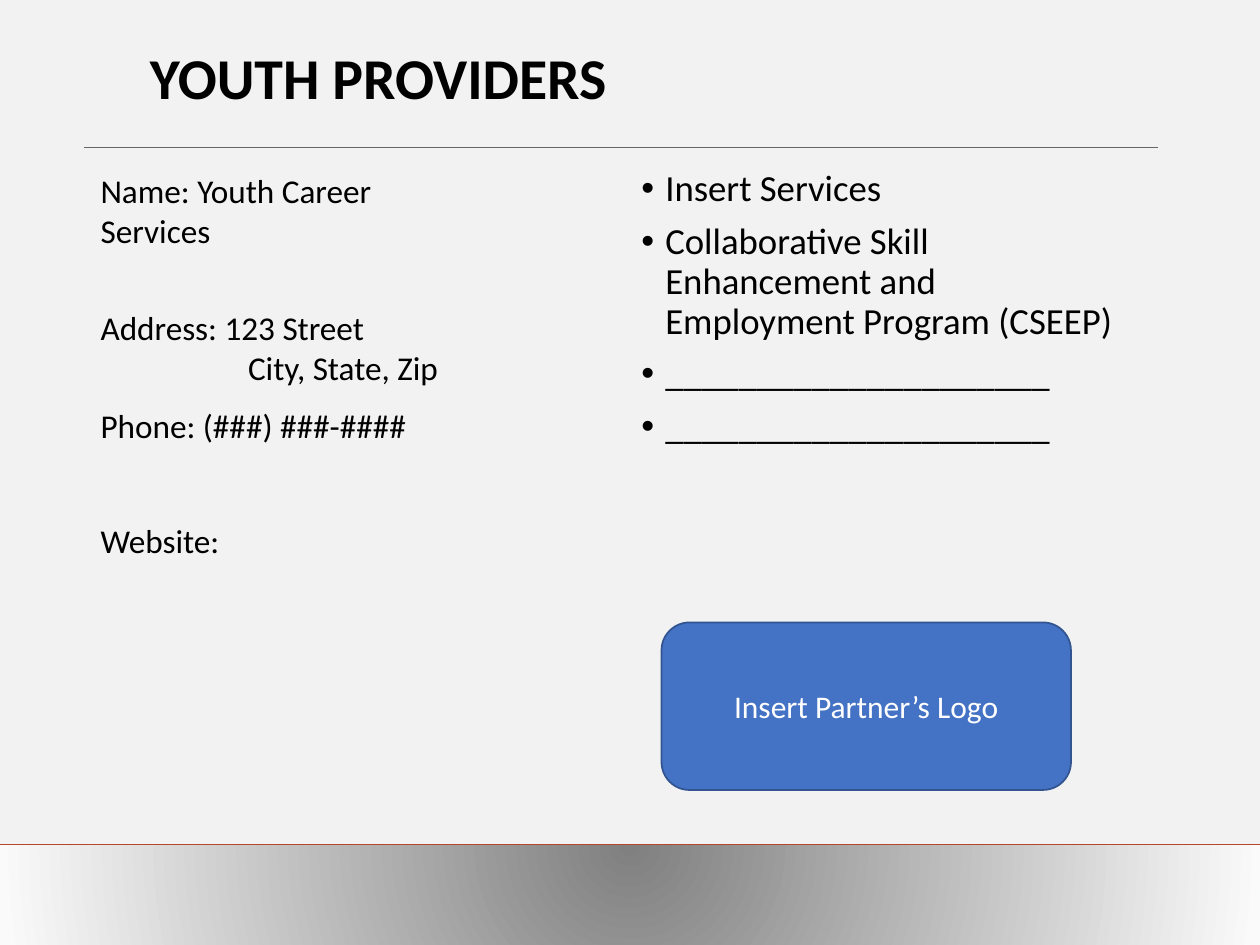
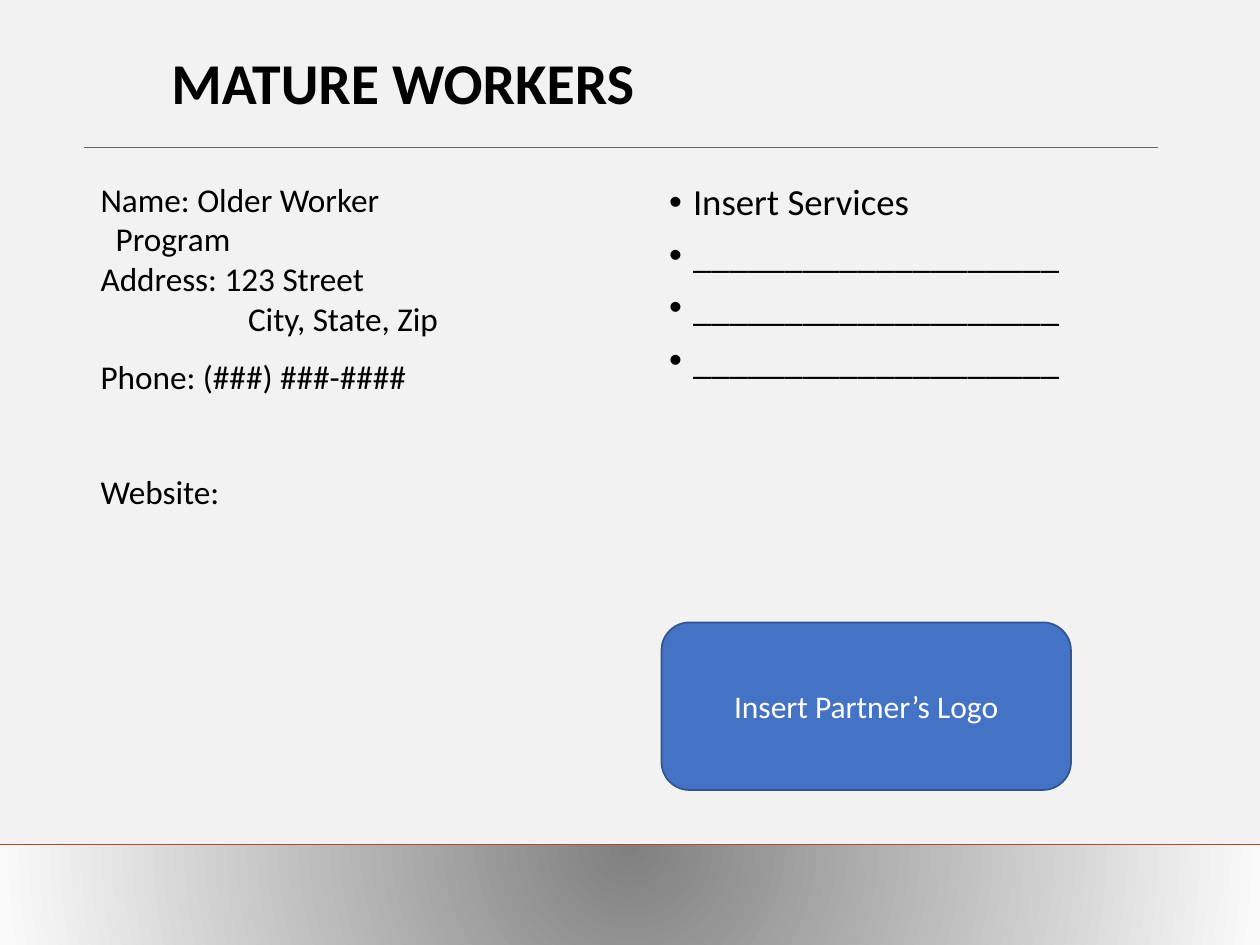
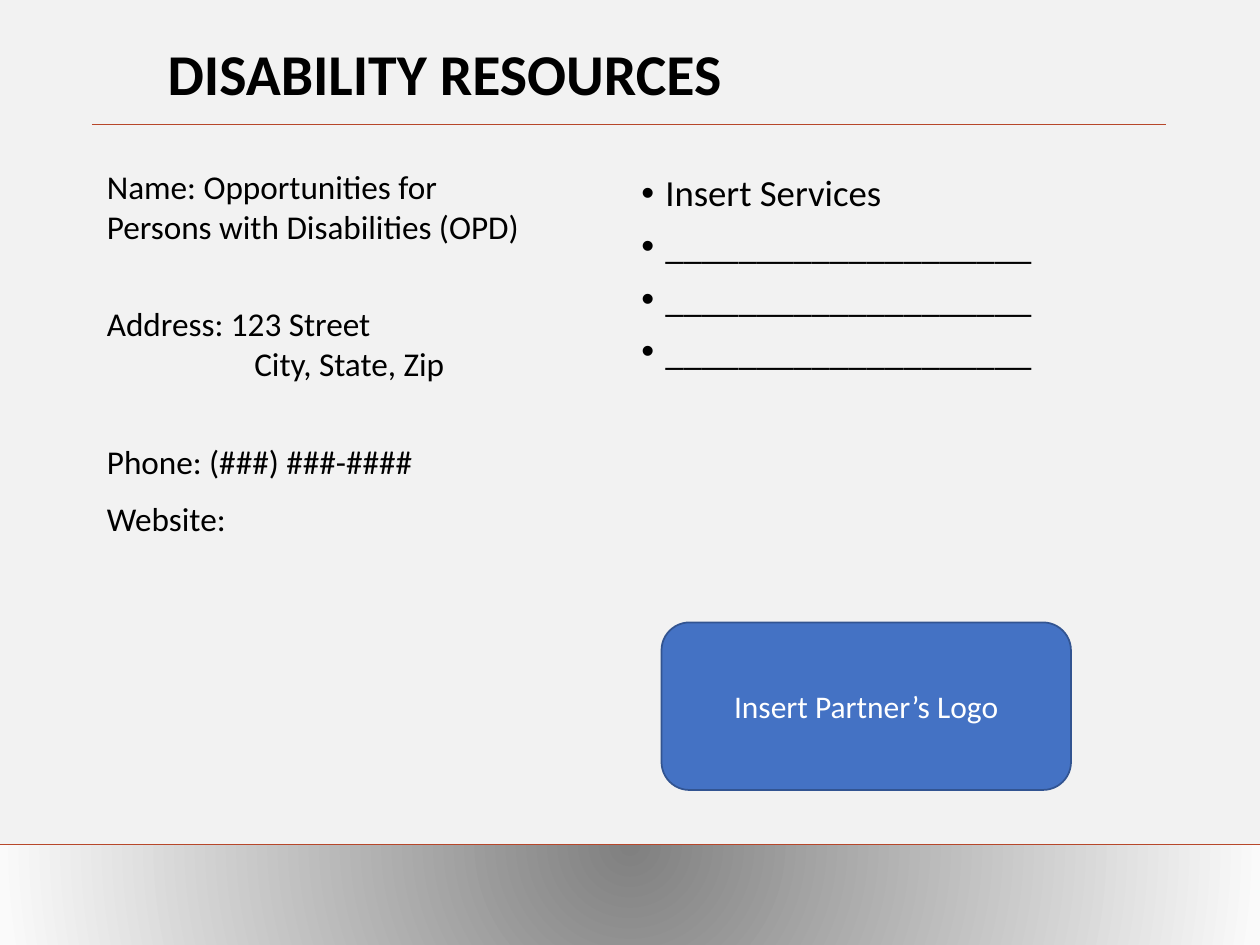
from dataclasses import dataclass

from lxml import etree
from pptx import Presentation
from pptx import util as u
from pptx.dml.color import RGBColor
from pptx.enum import shapes, text
from pptx.oxml.ns import qn

W, H = u.Inches(10), u.Inches(7.5)
COL, ROW = W / 10, H / 7.5
FONT = "Calibri"
BLACK = RGBColor(0x00, 0x00, 0x00)
WHITE = RGBColor(0xFF, 0xFF, 0xFF)
PAPER = RGBColor(0xF2, 0xF2, 0xF2)
RUST = RGBColor(0xB7, 0x47, 0x2A)
GREY = RGBColor(0x66, 0x66, 0x66)
BLUE = RGBColor(0x44, 0x72, 0xC4)
NAVY = RGBColor(0x32, 0x54, 0x91)
BAND_DARK = RGBColor(0x80, 0x80, 0x80)
BAND_LIGHT = RGBColor(0xFA, 0xFA, 0xFA)

TITLE_SIZE = (7.18, 1.14)
COLUMN_SIZE = (3.98, 3.42)
RULE_WIDTH = 8.52
LOGO_BOX = (5.25, 4.94, 3.25, 1.33)
BAND_BOX = (0, 6.71, 10, 0.79)
BAND_LINE_Y = 6.7
BULLET_INDENT = 0.19
CITY_INDENT = 1.17
SMALL_GAP, BLANK_GAP, WIDE_GAP = 10, 33, 43


@dataclass
class Provider:
    """Positions are (column, row); gaps are points above each contact line."""
    title: str
    title_at: tuple
    name: tuple
    contact_at: tuple
    address_gap: int
    phone_gap: int
    website_gap: int
    services: tuple
    services_at: tuple
    rule_at: tuple
    rule_color: RGBColor
    name_hang: float = 0


def grid(left, top, width, height):
    return [int(n) for n in (left * COL, top * ROW, width * COL, height * ROW)]


def place(sp, box):
    sp.left, sp.top, sp.width, sp.height = grid(*box)


def add_run(p, words, size, color=BLACK, bold=False):
    r = p.add_run()
    r.text = words
    r.font.name, r.font.size, r.font.bold = FONT, u.Pt(size), bold
    r.font.color.rgb = color


def indent(p, left, first=0):
    pPr = p._p.get_or_add_pPr()
    pPr.set("marL", str(int(left * COL)))
    pPr.set("indent", str(int(first * COL)))


def next_paragraph(tf, index):
    return tf.add_paragraph() if index else tf.paragraphs[0]


def add_rule(s, left, top, width, color):
    x, y, length, _ = grid(left, top, width, 0)
    line = s.shapes.add_connector(shapes.MSO_CONNECTOR.STRAIGHT, x, y, x + length, y)
    line.line.color.rgb = color
    line.line.width = u.Pt(0.5)
    etree.SubElement(line._element.spPr, qn("a:effectLst"))


def add_title(s, box, words):
    sp = s.shapes.title
    place(sp, box)
    tf = sp.text_frame
    tf.auto_size = text.MSO_AUTO_SIZE.NONE
    tf.vertical_anchor = text.MSO_ANCHOR.MIDDLE
    p = tf.paragraphs[0]
    p.alignment = text.PP_ALIGN.LEFT
    p.line_spacing = 0.9
    add_run(p, words, 33, bold=True)


def add_services(s, box, services):
    sp = s.placeholders[1]
    place(sp, box)
    tf = sp.text_frame
    tf.auto_size = text.MSO_AUTO_SIZE.NONE
    for i, service in enumerate(services):
        p = next_paragraph(tf, i)
        p.line_spacing = 0.9
        p.space_before = u.Pt(7.5)
        indent(p, BULLET_INDENT, -BULLET_INDENT)
        add_run(p, service, 21)


def add_contact(s, box, provider):
    tf = s.shapes.add_textbox(*grid(*box)).text_frame
    tf.word_wrap = True
    hang = provider.name_hang
    entries = [
        (provider.name, 0, hang, -hang),
        (("Address: 123 Street",), provider.address_gap, 0, 0),
        (("City, State, Zip",), 0, CITY_INDENT, 0),
        (("Phone: (###) ###-####",), provider.phone_gap, 0, 0),
        (("Website:",), provider.website_gap, 0, 0),
    ]
    for i, (lines, gap, left, first) in enumerate(entries):
        p = next_paragraph(tf, i)
        p.space_before = u.Pt(gap)
        indent(p, left, first)
        for j, line in enumerate(lines):
            if j:
                p.add_line_break()
            add_run(p, line, 19)


def add_footer_band(s, box):
    """Band shaded outwards from the middle of its top edge."""
    sp = s.shapes.add_shape(shapes.MSO_SHAPE.RECTANGLE, *grid(*box))
    sp.shadow.inherit = False
    sp.line.fill.background()
    sp.fill.gradient()
    for stop, color in zip(sp.fill.gradient_stops, (BAND_DARK, BAND_LIGHT)):
        stop.color.rgb = color
    grad = sp._element.spPr.find(qn("a:gradFill"))
    grad.remove(grad.find(qn("a:lin")))
    circle = etree.Element(qn("a:path"), {"path": "circle"})
    etree.SubElement(circle, qn("a:fillToRect"), l="43000", t="0", r="43000", b="100000")
    grad.find(qn("a:gsLst")).addnext(circle)


def add_logo_box(s, box):
    sp = s.shapes.add_shape(shapes.MSO_SHAPE.ROUNDED_RECTANGLE, *grid(*box))
    sp.shadow.inherit = False
    sp.fill.solid()
    sp.fill.fore_color.rgb = BLUE
    sp.line.color.rgb = NAVY
    sp.line.width = u.Pt(1)
    tf = sp.text_frame
    tf.vertical_anchor = text.MSO_ANCHOR.MIDDLE
    p = tf.paragraphs[0]
    p.alignment = text.PP_ALIGN.CENTER
    add_run(p, "Insert Partner’s Logo", 18, WHITE)


def add_provider_slide(prs, provider):
    s = prs.slides.add_slide(prs.slide_layouts[1])
    add_rule(s, 0, BAND_LINE_Y, 10, RUST)
    add_title(s, provider.title_at + TITLE_SIZE, provider.title)
    add_services(s, provider.services_at + COLUMN_SIZE, provider.services)
    add_contact(s, provider.contact_at + COLUMN_SIZE, provider)
    add_footer_band(s, BAND_BOX)
    add_rule(s, *provider.rule_at, RULE_WIDTH, provider.rule_color)
    add_logo_box(s, LOGO_BOX)


BLANKS = ("_" * 20,) * 3
PROVIDERS = [
    Provider(
        title="YOUTH PROVIDERS", title_at=(1.09, 0.07),
        name=("Name: Youth Career", "Services"), contact_at=(0.7, 1.3),
        address_gap=BLANK_GAP, phone_gap=SMALL_GAP, website_gap=WIDE_GAP,
        services=("Insert Services",
                  "Collaborative Skill Enhancement and Employment Program (CSEEP)",
                  *("_" * 21,) * 2),
        services_at=(4.99, 1.3), rule_at=(0.67, 1.17), rule_color=GREY),
    Provider(
        title="MATURE WORKERS", title_at=(1.26, 0.11),
        name=("Name: Older Worker", "Program"), contact_at=(0.7, 1.37),
        address_gap=0, phone_gap=SMALL_GAP, website_gap=WIDE_GAP,
        services=("Insert Services", *BLANKS),
        services_at=(5.21, 1.41), rule_at=(0.67, 1.17), rule_color=GREY,
        name_hang=0.12),
    Provider(
        title="DISABILITY RESOURCES", title_at=(1.23, 0.04),
        name=("Name: Opportunities for", "Persons with Disabilities (OPD)"),
        contact_at=(0.75, 1.27),
        address_gap=BLANK_GAP, phone_gap=BLANK_GAP, website_gap=SMALL_GAP,
        services=("Insert Services", *BLANKS),
        services_at=(4.99, 1.34), rule_at=(0.73, 0.99), rule_color=RUST),
]


def main():
    prs = Presentation()
    prs.slide_width, prs.slide_height = W, H
    background = prs.slide_master.background.fill
    background.solid()
    background.fore_color.rgb = PAPER
    for provider in PROVIDERS:
        add_provider_slide(prs, provider)
    prs.save("out.pptx")


if __name__ == "__main__":
    main()
